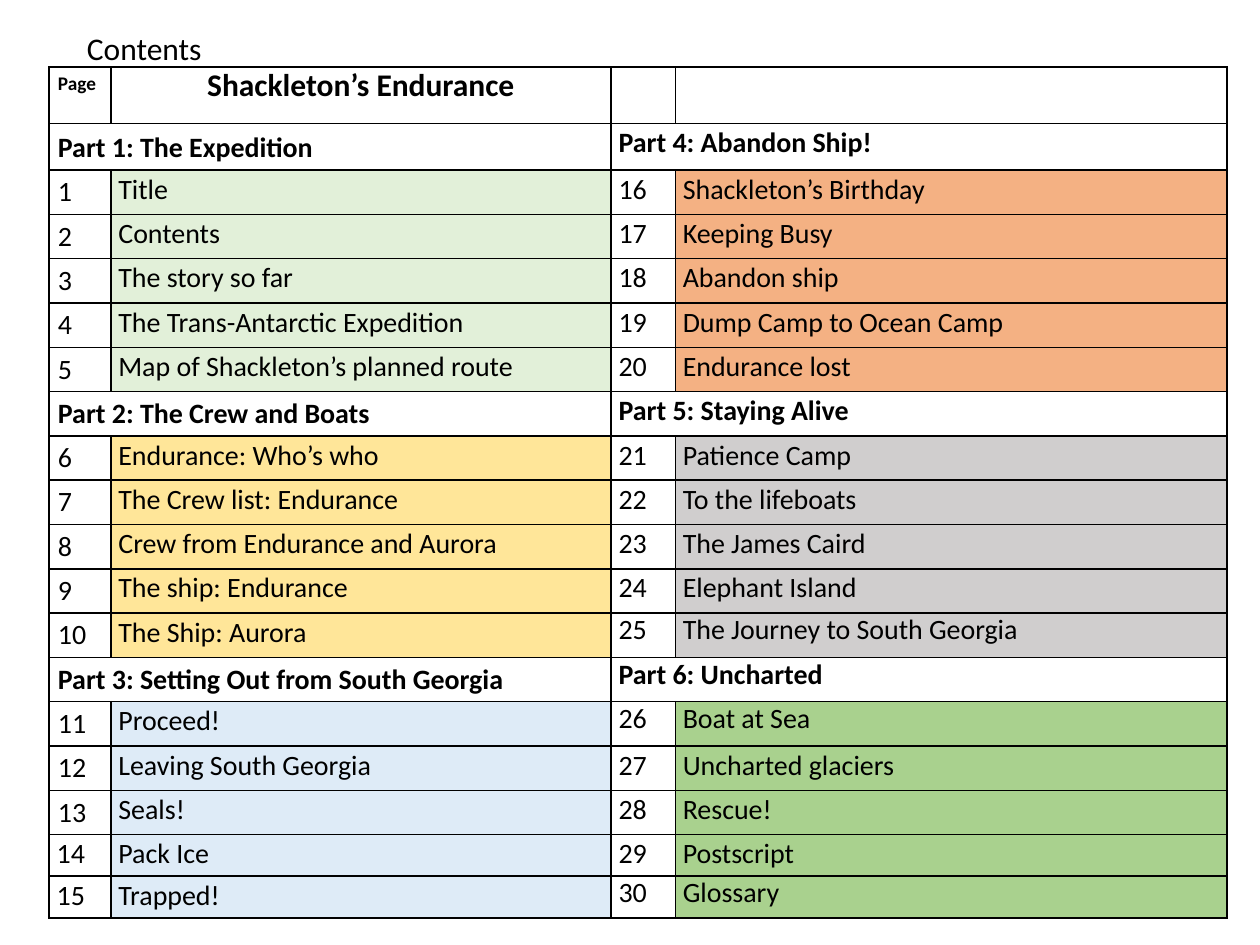
from itertools import count

from lxml.etree import SubElement
from pptx import Presentation
from pptx.dml.color import RGBColor
from pptx.enum.text import MSO_ANCHOR, MSO_AUTO_SIZE, PP_ALIGN
from pptx.oxml.ns import qn
from pptx.util import Inches, Pt

BLACK = RGBColor(0x00, 0x00, 0x00)
PALE_GREEN = RGBColor(0xE2, 0xF0, 0xD9)
YELLOW = RGBColor(0xFF, 0xE6, 0x99)
PALE_BLUE = RGBColor(0xDE, 0xEB, 0xF7)
ORANGE = RGBColor(0xF4, 0xB1, 0x83)
GREY = RGBColor(0xD0, 0xCE, 0xCE)
GREEN = RGBColor(0xA9, 0xD1, 0x8E)
FONT = "Calibri"

LEFT_PARTS = [
    ("Part 1: The Expedition", PALE_GREEN,
     ["Title", "Contents", "The story so far", "The Trans-Antarctic Expedition",
      "Map of Shackleton’s planned route"]),
    ("Part 2: The Crew and Boats", YELLOW,
     ["Endurance: Who’s who", "The Crew list: Endurance",
      "Crew from Endurance and Aurora", "The ship: Endurance", "The Ship: Aurora"]),
    ("Part 3: Setting Out from South Georgia", PALE_BLUE,
     ["Proceed!", "Leaving South Georgia", "Seals!", "Pack Ice", "Trapped!"]),
]
RIGHT_PARTS = [
    ("Part 4: Abandon Ship!", ORANGE,
     ["Shackleton’s Birthday", "Keeping Busy", "Abandon ship",
      "Dump Camp to Ocean Camp", "Endurance lost"]),
    ("Part 5: Staying Alive", GREY,
     ["Patience Camp", "To the lifeboats", "The James Caird", "Elephant Island",
      "The Journey to South Georgia"]),
    ("Part 6: Uncharted", GREEN,
     ["Boat at Sea", "Uncharted glaciers", "Rescue!", "Postscript", "Glossary"]),
]
COL_WIDTHS = [0.49, 3.97, 0.51, 4.38]
ROW_HEIGHTS = [0.45] + [0.35] * 16 + [0.33] * 2
NARROW_PAGES = {14, 15}
SINGLE_SPACED = {"Part 6: Uncharted"}
SINGLE_SPACED_PAGES = {25, 26, 30}


def add_run(p, text, size, bold=False):
    r = p.add_run()
    r.text = text
    r.font.name = FONT
    r.font.size = Pt(size)
    r.font.bold = bold
    r.font.color.rgb = BLACK


def set_borders(cell):
    tc_pr = cell._tc.get_or_add_tcPr()
    for i, side in enumerate(("lnL", "lnR", "lnT", "lnB")):
        ln = tc_pr.makeelement(qn(f"a:{side}"), {"w": str(Pt(1))})
        fill = SubElement(ln, qn("a:solidFill"))
        SubElement(fill, qn("a:srgbClr"), val=str(BLACK))
        tc_pr.insert(i, ln)


def set_cell(cell, text, size=16, bold=False, padded=False, spaced=True, fill=None):
    cell.margin_left = cell.margin_right = Inches(0.07 if padded else 0.06)
    cell.margin_top = cell.margin_bottom = Inches(0.04 if padded else 0)
    p = cell.text_frame.paragraphs[0]
    if spaced:
        p.line_spacing = 1.07
        p.space_after = Pt(8)
    add_run(p, text, size, bold)
    if fill is not None:
        cell.fill.solid()
        cell.fill.fore_color.rgb = fill


def add_title(slide, left, top, width, height):
    title = slide.shapes.title
    title.left, title.top, title.width, title.height = left, top, width, height
    tf = title.text_frame
    tf.auto_size = MSO_AUTO_SIZE.NONE
    tf.vertical_anchor = MSO_ANCHOR.MIDDLE
    p = tf.paragraphs[0]
    p.alignment = PP_ALIGN.LEFT
    p.line_spacing = 0.9
    add_run(p, "Contents", 18)


def fill_half(table, col, parts, first_page):
    pages = count(first_page)
    rows = count(1)
    on_left = col == 0
    for heading, colour, entries in parts:
        row = next(rows)
        cell = table.cell(row, col)
        cell.merge(table.cell(row, col + 1))
        spaced = row == 1 or (not on_left and heading not in SINGLE_SPACED)
        set_cell(cell, heading, bold=True, padded=on_left, spaced=spaced)
        for entry in entries:
            row, page = next(rows), next(pages)
            padded = on_left and page not in NARROW_PAGES
            spaced = page not in SINGLE_SPACED_PAGES
            set_cell(table.cell(row, col), str(page), padded=padded,
                     spaced=spaced and not padded)
            set_cell(table.cell(row, col + 1), entry, spaced=spaced, fill=colour)


def add_contents_table(slide, left, top, width, height):
    table = slide.shapes.add_table(
        len(ROW_HEIGHTS), len(COL_WIDTHS), left, top, width, height).table
    table.first_row = False
    table.horz_banding = False
    for column, w in zip(table.columns, COL_WIDTHS):
        column.width = Inches(w)
    for row, h in zip(table.rows, ROW_HEIGHTS):
        row.height = Inches(h)
    for cell in table.iter_cells():
        cell.fill.background()
        set_borders(cell)

    set_cell(table.cell(0, 0), "Page", 11, bold=True, padded=True, spaced=False)
    set_cell(table.cell(0, 1), "Shackleton’s Endurance", 18, bold=True, spaced=False)
    table.cell(0, 1).text_frame.paragraphs[0].alignment = PP_ALIGN.CENTER
    fill_half(table, 0, LEFT_PARTS, 1)
    fill_half(table, 2, RIGHT_PARTS, 16)


def main():
    prs = Presentation()
    prs.slide_width, prs.slide_height = Inches(10), Inches(7.5)
    slide = prs.slides.add_slide(prs.slide_layouts[5])
    add_title(slide, Inches(0.59), Inches(0.18), Inches(8.38), Inches(0.44))
    add_contents_table(slide, Inches(0.39), Inches(0.53), Inches(9.35), Inches(6.7))
    prs.save("out.pptx")


if __name__ == "__main__":
    main()
